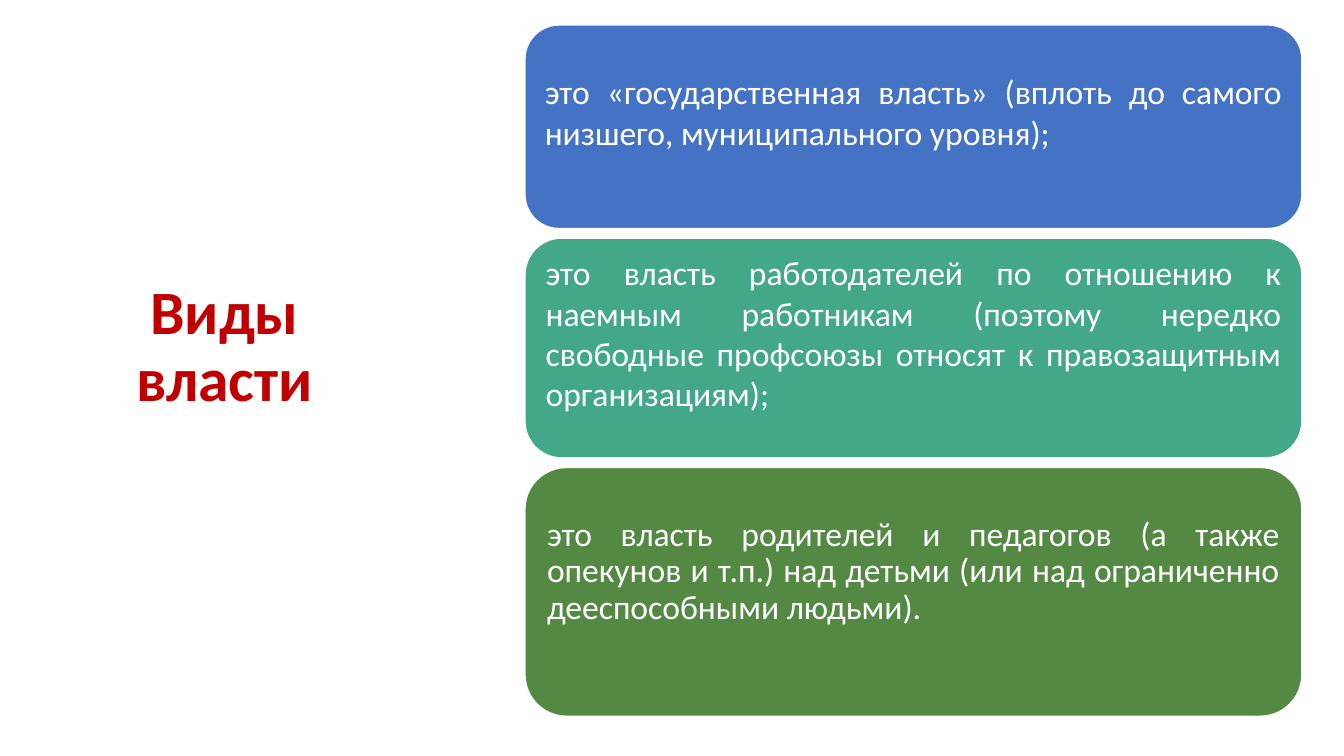
from pptx import Presentation
from pptx.dml.color import RGBColor
from pptx.enum.shapes import MSO_SHAPE
from pptx.enum.text import MSO_ANCHOR, PP_ALIGN
from pptx.util import Cm, Pt

ROUNDED = MSO_SHAPE.ROUNDED_RECTANGLE
MIDDLE = MSO_ANCHOR.MIDDLE
CENTER, JUSTIFY = PP_ALIGN.CENTER, PP_ALIGN.JUSTIFY

# Content
HEADING = "Виды власти"
# text, fill, height (cm), line spacing, space kept free below the text (cm)
POWERS = [
    ("это «государственная власть» (вплоть до самого низшего, "
     "муниципального уровня);", "blue", 5.13, 1.0, 0.77),
    ("это власть работодателей по отношению к наемным работникам "
     "(поэтому нередко свободные профсоюзы относят к правозащитным "
     "организациям);", "teal", 5.54, 1.0, 0.77),
    ("это власть родителей и педагогов (а также опекунов и т.п.) над детьми "
     "(или над ограниченно дееспособными людьми).", "green", 6.27, 0.9, 1.0),
]
COLORS = {"heading": "C00000", "white": "FFFFFF", "blue": "4472C4",
          "teal": "42A889", "green": "538943"}
FONT = "Calibri"

# Layout in cm
CARD_LEFT, CARD_TOP, CARD_WIDTH, CARD_GAP = 13.23, 0.63, 19.58, 0.24
INSET = 0.25


def color(name):
    return RGBColor.from_string(COLORS[name])


def format_paragraph(paragraph, size, color_name, align, spacing, bold=False):
    paragraph.alignment = align
    paragraph.line_spacing = spacing
    paragraph.font.name = FONT
    paragraph.font.size = Pt(size)
    paragraph.font.bold = bold
    paragraph.font.color.rgb = color(color_name)


def add_card(slide, top, text, fill, height, spacing, space_below):
    card = slide.shapes.add_shape(ROUNDED, Cm(CARD_LEFT), Cm(top),
                                  Cm(CARD_WIDTH), Cm(height))
    card.shadow.inherit = False
    card.fill.solid()
    card.fill.fore_color.rgb = color(fill)
    card.line.color.rgb = color("white")
    card.line.width = Pt(1)
    frame = card.text_frame
    frame.word_wrap = True
    frame.vertical_anchor = MIDDLE
    frame.margin_left = frame.margin_right = frame.margin_top = Cm(INSET)
    frame.margin_bottom = Cm(INSET + space_below)
    frame.text = text
    format_paragraph(frame.paragraphs[0], 24, "white", JUSTIFY, spacing)


def main():
    prs = Presentation()
    prs.slide_width, prs.slide_height = Cm(33.87), Cm(19.05)
    slide = prs.slides.add_slide(prs.slide_layouts[5])

    # Heading
    title = slide.shapes.title
    title.left, title.top = Cm(1.75), Cm(2.24)
    title.width, title.height = Cm(7.82), Cm(13.06)
    title.text_frame.text = HEADING
    title.text_frame.word_wrap = True
    title.text_frame.vertical_anchor = MIDDLE
    format_paragraph(title.text_frame.paragraphs[0], 44, "heading", CENTER,
                     0.9, bold=True)

    # Stacked cards
    top = CARD_TOP
    for text, fill, height, spacing, space_below in POWERS:
        add_card(slide, top, text, fill, height, spacing, space_below)
        top += height + CARD_GAP

    prs.save("out.pptx")


if __name__ == "__main__":
    main()
